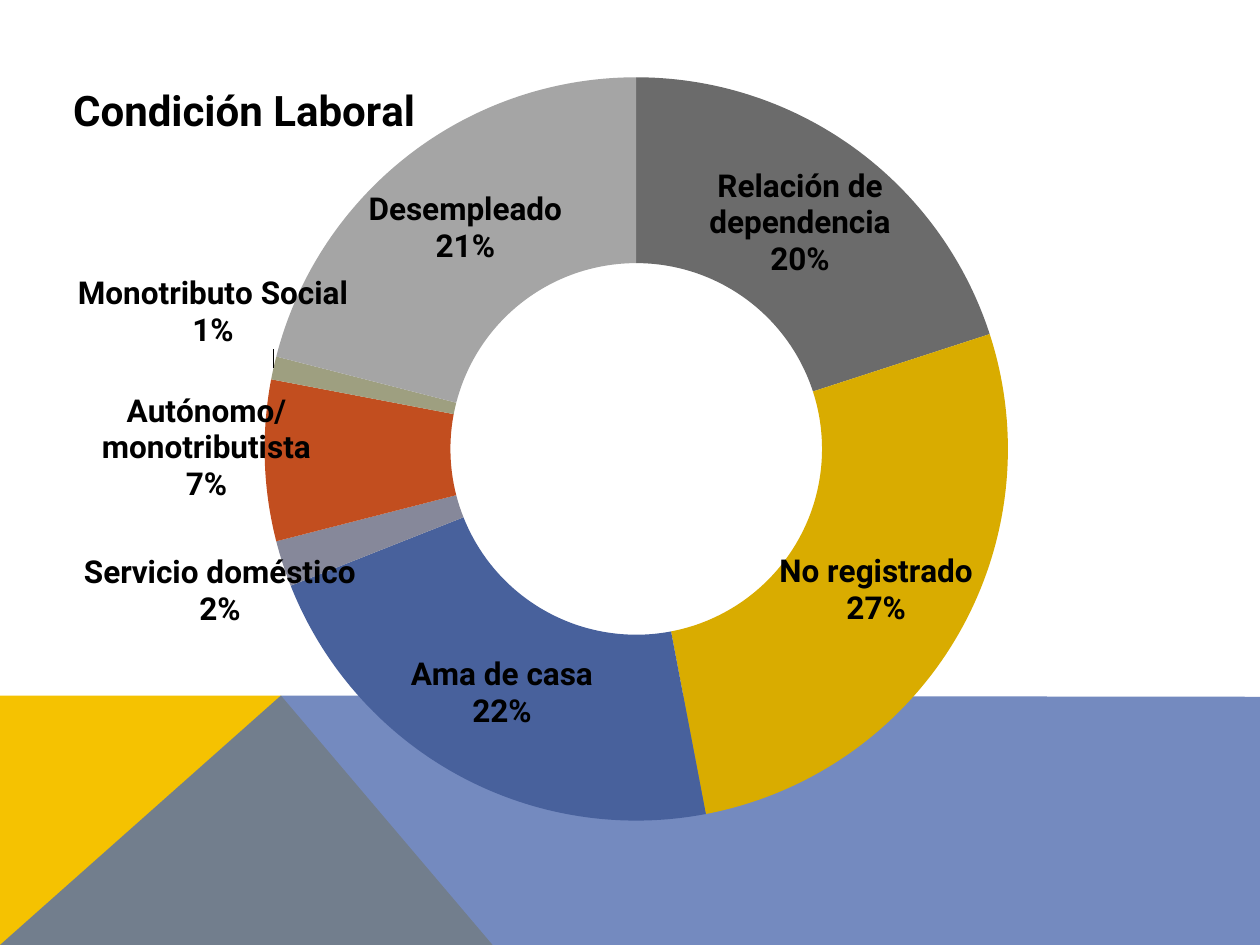
from typing import NamedTuple, Optional

import pptx
import pptx.chart.data
import pptx.dml.color
import pptx.enum.chart
import pptx.oxml
import pptx.oxml.ns
import pptx.util

Inches = pptx.util.Inches
qn = pptx.oxml.ns.qn

COLOURS = {
    "text": "000000",
    "yellow": "F5C201",
    "band": "526DB0",
    "dark grey": "6B6B6B",
    "gold": "D9AC00",
    "blue": "48619C",
    "lavender": "86889A",
    "orange": "C24E1F",
    "olive": "9E9F80",
    "light grey": "A5A5A5",
}
FONT = "Roboto"
TITLE = "Condición Laboral"


class Band(NamedTuple):
    points: list[tuple[float, float]]
    colour: str
    opacity: Optional[int] = None


class Slice(NamedTuple):
    category: str
    percent: int
    colour: str
    label_offset: Optional[tuple[float, float]] = None


BANDS = [
    Band([(0, 7.5), (0, 5.52), (2.23, 5.52), (3.91, 7.5)], "yellow"),
    Band([(0, 7.5), (2.23, 5.52), (10, 5.53), (10, 7.5)], "band", 80),
]
SLICES = [
    Slice("Relación de dependencia", 20, "dark grey"),
    Slice("No registrado", 27, "gold"),
    Slice("Ama de casa", 22, "blue"),
    Slice("Servicio doméstico", 2, "lavender", (-0.12, 0.06)),
    Slice("Autónomo/monotributista", 7, "orange", (-0.12, -0.01)),
    Slice("Monotributo Social", 1, "olive", (-0.12, -0.08)),
    Slice("Desempleado", 21, "light grey"),
]


def rgb(name: str) -> pptx.dml.color.RGBColor:
    return pptx.dml.color.RGBColor.from_string(COLOURS[name])


def format_font(font, size: int, bold: bool = True) -> None:
    for name, value in {"name": FONT, "size": pptx.util.Pt(size), "bold": bold}.items():
        setattr(font, name, value)
    font.color.rgb = rgb("text")


def draw_band(slide, band: Band) -> None:
    points = [(Inches(x), Inches(y)) for x, y in band.points]
    builder = slide.shapes.build_freeform(*points[0], scale=1.0)
    builder.add_line_segments(points[1:], close=True)
    shape = builder.convert_to_shape()
    shape.shadow.inherit = False
    shape.line.fill.background()
    shape.fill.solid()
    shape.fill.fore_color.rgb = rgb(band.colour)
    if band.opacity is not None:
        colour = shape._element.spPr.find(".//" + qn("a:srgbClr"))
        alpha = pptx.oxml.parse_xml(f'<a:alpha {pptx.oxml.ns.nsdecls("a")} val="{band.opacity * 1000}"/>')
        colour.append(alpha)


def manual_layout(**values):
    """Return a c:layout element holding the given values in schema order."""
    children = "".join(f'<c:{name} val="{value}"/>' for name, value in values.items())
    return pptx.oxml.parse_xml(
        f'<c:layout {pptx.oxml.ns.nsdecls("c")}><c:manualLayout>{children}</c:manualLayout></c:layout>'
    )


def set_layout(parent, layout, after: Optional[str] = None) -> None:
    for old in parent.findall(qn("c:layout")):
        parent.remove(old)
    if after is None:
        parent.insert(0, layout)
    else:
        parent.find(qn(after)).addnext(layout)


def add_line_separator(labels) -> None:
    separator = pptx.oxml.parse_xml(f'<c:separator {pptx.oxml.ns.nsdecls("c")}>\n</c:separator>')
    anchor = labels.find(qn("c:showBubbleSize"))
    if anchor is None:
        anchor = labels.find(qn("c:showPercent"))
    anchor.addnext(separator)


def move_label(series, index: int, offset: tuple[float, float]) -> None:
    format_font(series.points[index].data_label.font, 18)
    label = series._element.xpath(f"c:dLbls/c:dLbl[c:idx/@val='{index}']")[0]
    for name, shown in {"showVal": 0, "showCatName": 1, "showPercent": 1}.items():
        label.find(qn(f"c:{name}")).set("val", str(shown))
    set_layout(label, manual_layout(x=offset[0], y=offset[1]), after="c:idx")
    add_line_separator(label)


def draw_doughnut(slide, slices: list[Slice]) -> None:
    data = pptx.chart.data.CategoryChartData()
    data.categories = [item.category for item in slices]
    data.add_series(TITLE, [item.percent for item in slices])
    chart = slide.shapes.add_chart(
        pptx.enum.chart.XL_CHART_TYPE.DOUGHNUT,
        Inches(0.02), Inches(0.29), Inches(10), Inches(7.5), data,
    ).chart
    chart.has_legend = False
    format_font(chart.font, 10, bold=False)

    chart.has_title = True
    title = chart.chart_title
    title.text_frame.text = TITLE
    format_font(title.text_frame.paragraphs[0].runs[0].font, 24)
    set_layout(
        title._element,
        manual_layout(xMode="edge", yMode="edge", x=0.05, y=0.04),
        after="c:tx",
    )
    set_layout(
        chart._chartSpace.chart.plotArea,
        manual_layout(layoutTarget="inner", xMode="edge", yMode="edge", x=0.208, y=0.043, w=0.59, h=0.787),
    )

    series = chart.plots[0].series[0]
    labels = series.data_labels
    for name, shown in {"show_value": False, "show_category_name": True, "show_percentage": True}.items():
        setattr(labels, name, shown)
    format_font(labels.font, 18)
    add_line_separator(labels._element)
    for index, item in enumerate(slices):
        point = series.points[index]
        point.format.fill.solid()
        point.format.fill.fore_color.rgb = rgb(item.colour)
        point.format.line.fill.background()
        if item.label_offset:
            move_label(series, index, item.label_offset)


def main() -> None:
    presentation = pptx.Presentation()
    presentation.slide_width = Inches(10)
    presentation.slide_height = Inches(7.5)
    slide = presentation.slides.add_slide(presentation.slide_layouts[6])
    for band in BANDS:
        draw_band(slide, band)
    draw_doughnut(slide, SLICES)
    presentation.save("out.pptx")


if __name__ == "__main__":
    main()
